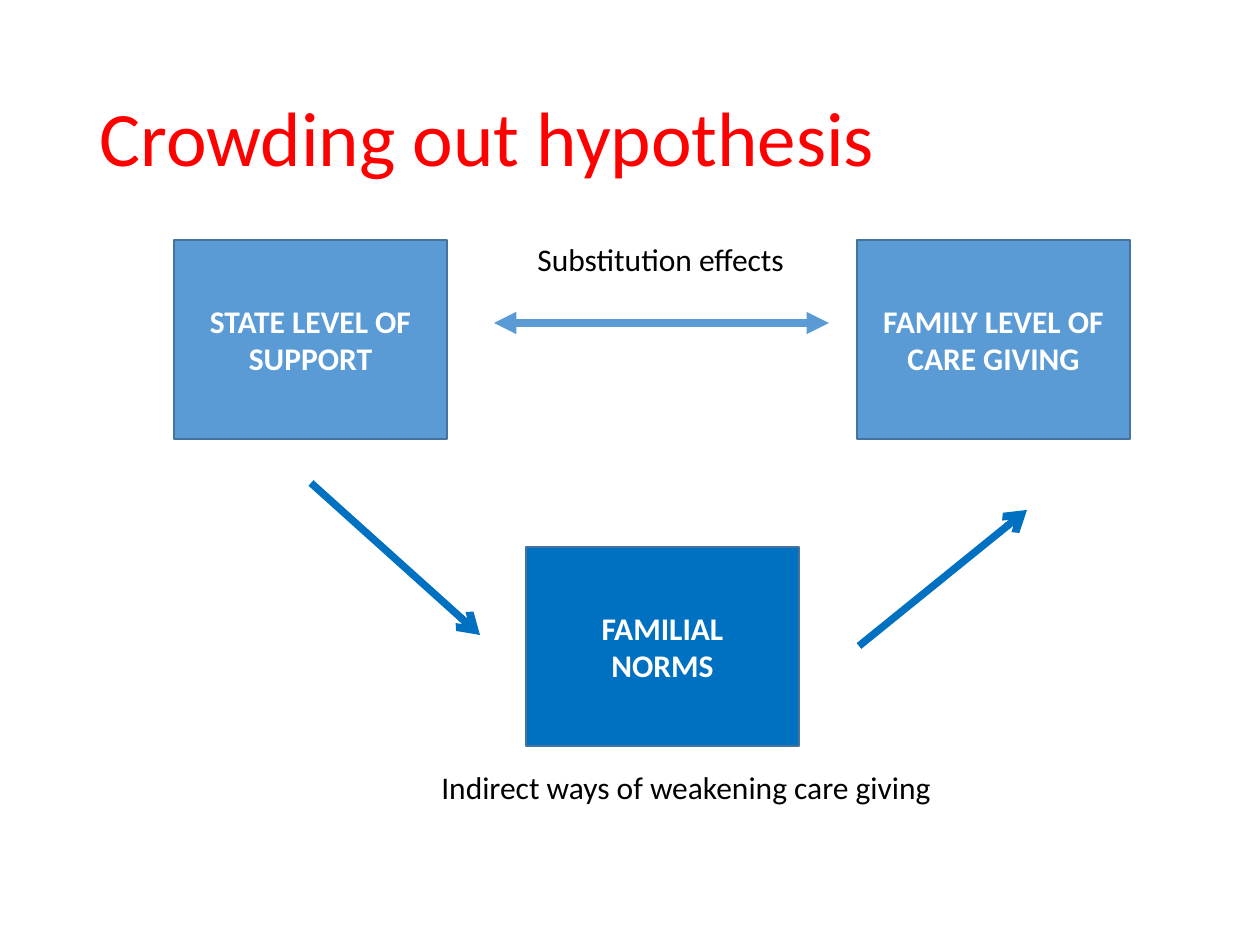
from pptx import Presentation
from pptx.dml.color import RGBColor
from pptx.enum.shapes import MSO_CONNECTOR, MSO_SHAPE
from pptx.enum.text import MSO_ANCHOR, PP_ALIGN
from pptx.oxml.ns import qn
from pptx.util import Pt
from lxml.etree import SubElement

SCALE = 914400 / 126
COLORS = {"red": "FF0000", "sky": "5B9BD5", "blue": "0070C0",
          "edge": "43739E", "white": "FFFFFF", "black": "000000"}


def px(*nums):
    return [round(num * SCALE) for num in nums]


def color(name):
    return RGBColor.from_string(COLORS[name])


def write(shape, text, size=18, ink="black", bold=False,
          align=PP_ALIGN.LEFT, anchor=MSO_ANCHOR.TOP, space=1.0):
    frame = shape.text_frame
    frame.word_wrap = True
    frame.vertical_anchor = anchor
    frame.text = text
    for para in frame.paragraphs:
        para.alignment = align
        para.line_spacing = space
        for run in para.runs:
            font = run.font
            font.name = "Calibri"
            font.size = Pt(size)
            font.bold = bold
            font.color.rgb = color(ink)


def label(slide, box, text, **style):
    write(slide.shapes.add_textbox(*px(*box)), text, **style)


def block(slide, box, text, fill):
    shape = slide.shapes.add_shape(MSO_SHAPE.RECTANGLE, *px(*box))
    shape.shadow.inherit = False
    shape.fill.solid()
    shape.fill.fore_color.rgb = color(fill)
    shape.line.color.rgb = color("edge")
    shape.line.width = Pt(1)
    write(shape, text, ink="white", bold=True,
          align=PP_ALIGN.CENTER, anchor=MSO_ANCHOR.MIDDLE)


def arrow(slide, ends, ink, tail, head=None):
    link = slide.shapes.add_connector(MSO_CONNECTOR.STRAIGHT, *px(*ends))
    link.line.color.rgb = color(ink)
    link.line.width = Pt(4.25)
    props = link.line._get_or_add_ln()
    for tag, kind in (("a:headEnd", head), ("a:tailEnd", tail)):
        if kind:
            SubElement(props, qn(tag), type=kind)
    SubElement(link._element.spPr, qn("a:effectLst"))


def direct(slide, box):
    left, top, width, height = box
    wide = 273
    block(slide, (left, top, wide, height), "STATE LEVEL OF SUPPORT", "sky")
    block(slide, (left + width - wide, top, wide, height),
          "FAMILY LEVEL OF CARE GIVING", "sky")
    arrow(slide, (left + 320, top + 83, left + 655, top + 83),
          "sky", "triangle", head="triangle")
    label(slide, (left + 351, top - 6, 604, 50), "Substitution effects")


def norms(slide, box):
    left, top, width, height = box
    block(slide, box, "FAMILIAL\nNORMS", "blue")
    arrow(slide, (left - 215, top - 64, left - 46, top + 88), "blue", "arrow")
    start = left + width + 60
    arrow(slide, (start, top + 99, start + 168, top - 37), "blue", "arrow")
    label(slide, (left - 97, top + height + 16, 604, 50),
          "Indirect ways of weakening care giving")


def main():
    deck = Presentation()
    deck.slide_width, deck.slide_height = px(1260, 945)
    slide = deck.slides.add_slide(deck.slide_layouts[6])
    label(slide, (87, 50, 1086, 183), "Crowding out hypothesis", size=44,
          ink="red", anchor=MSO_ANCHOR.MIDDLE, space=0.9)
    direct(slide, (174, 240, 956, 199))
    norms(slide, (526, 547, 273, 199))
    deck.save("out.pptx")


if __name__ == "__main__":
    main()
